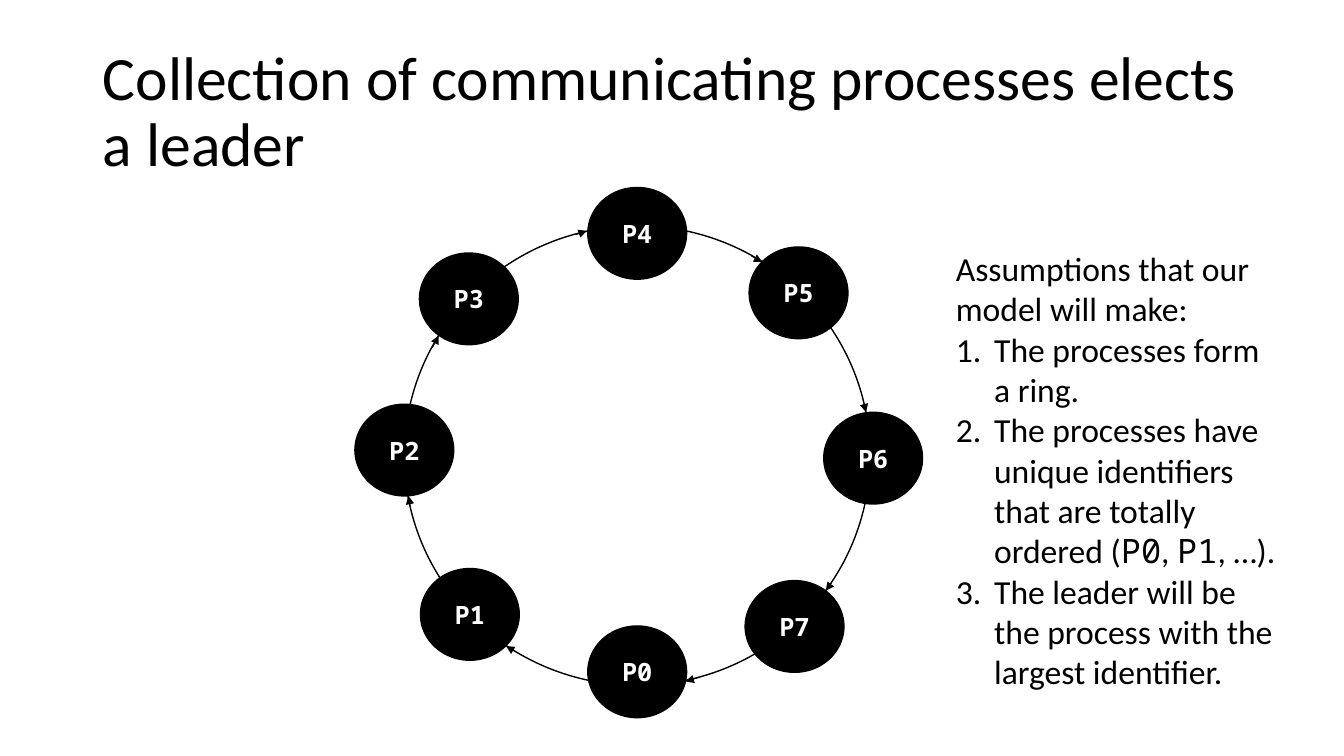
from pptx import Presentation, util as u
from pptx.dml.color import RGBColor
from pptx.enum import shapes, text
from pptx.oxml.ns import qn
from lxml import etree

PX = u.Inches(1) // 100
BLACK, WHITE = "000000", "FFFFFF"
SANS, MONO = "Calibri", "Noto Sans Mono"


def colour(code):
    return RGBColor.from_string(code)


class Slide:
    def __init__(self, page):
        self.page = page

    def place(self, shape, left, top, width, height):
        shape.left, shape.top = left * PX, top * PX
        shape.width, shape.height = width * PX, height * PX

    def format(self, span, size, font=SANS, code=BLACK, bold=False):
        span.font.size = u.Pt(size)
        span.font.name = font
        span.font.bold = bold
        span.font.color.rgb = colour(code)

    def title(self, words, *area):
        box = self.page.shapes.title
        self.place(box, *area)
        frame = box.text_frame
        frame.text = words
        frame.auto_size = text.MSO_AUTO_SIZE.NONE
        frame.vertical_anchor = text.MSO_ANCHOR.MIDDLE
        para = frame.paragraphs[0]
        para.alignment = text.PP_ALIGN.LEFT
        para.line_spacing = 0.9
        self.format(para.runs[0], 44)

    def numbered_list(self, heading, items, *area):
        box = self.page.placeholders[1]
        self.place(box, *area)
        frame = box.text_frame
        frame.auto_size = text.MSO_AUTO_SIZE.SHAPE_TO_FIT_TEXT
        frame.vertical_anchor = text.MSO_ANCHOR.TOP
        for index, pieces in enumerate([[(heading, SANS)]] + items):
            para = frame.add_paragraph() if index else frame.paragraphs[0]
            para.space_before = u.Pt(0)
            for words, font in pieces:
                span = para.add_run()
                span.text = words
                self.format(span, 24, font)
            self.number(para, 38 if index else 0)

    def number(self, para, indent):
        props = para._p.get_or_add_pPr()
        props.set("marL", str(indent * PX))
        props.set("indent", str(-indent * PX))
        if indent:
            etree.SubElement(props, qn("a:buFont"), typeface=SANS)
            etree.SubElement(props, qn("a:buAutoNum"), type="arabicPeriod")
        else:
            etree.SubElement(props, qn("a:buNone"))

    def ellipse(self, left, top, width, height):
        shape = self.page.shapes.add_shape(
            shapes.MSO_SHAPE.OVAL, left * PX, top * PX, width * PX, height * PX)
        shape.shadow.inherit = False
        shape.fill.background()
        shape.line.color.rgb = colour(BLACK)
        shape.line.width = u.Pt(1)
        return shape

    def process(self, name, left, top):
        shape = self.ellipse(left, top, 98, 91)
        shape.fill.solid()
        shape.fill.fore_color.rgb = colour(BLACK)
        frame = shape.text_frame
        frame.text = name
        frame.vertical_anchor = text.MSO_ANCHOR.MIDDLE
        para = frame.paragraphs[0]
        para.alignment = text.PP_ALIGN.CENTER
        self.format(para.runs[0], 18, MONO, WHITE, True)

    def arrow(self, *ends):
        line = self.page.shapes.add_connector(
            shapes.MSO_CONNECTOR.STRAIGHT, *(end * PX for end in ends))
        line.line.color.rgb = colour(BLACK)
        line.line.width = u.Pt(0.5)
        etree.SubElement(line.line._get_or_add_ln(), qn("a:tailEnd"), type="triangle")
        etree.SubElement(line._element.spPr, qn("a:effectLst"))


def main():
    deck = Presentation()
    deck.slide_width, deck.slide_height = 1333 * PX, 750 * PX
    slide = Slide(deck.slides.add_slide(deck.slide_layouts[1]))

    slide.title("Collection of communicating processes elects a leader",
                92, 40, 1150, 145)
    slide.numbered_list(
        "Assumptions that our model will make:",
        [
            [("The processes form a ring.", SANS)],
            [("The processes have unique identifiers that are totally ordered (", SANS),
             ("P0", MONO), (", ", SANS), ("P1", MONO), (", …).", SANS)],
            [("The leader will be the process with the largest identifier.", SANS)],
        ],
        938, 241, 341, 454)

    slide.ellipse(401, 224, 462, 456)
    processes = [(583, 621), (417, 564), (352, 401), (416, 251),
                 (583, 186), (743, 245), (817, 409), (739, 576)]
    for index, corner in enumerate(processes):
        slide.process(f"P{index}", *corner)

    arrowheads = [(429, 345, 435, 333), (571, 233, 582, 229),
                  (745, 254, 756, 260), (856, 397, 859, 409),
                  (825, 578, 819, 586), (694, 672, 680, 676),
                  (512, 647, 502, 641), (407, 502, 405, 492)]
    for ends in arrowheads:
        slide.arrow(*ends)

    deck.save("out.pptx")


if __name__ == "__main__":
    main()
